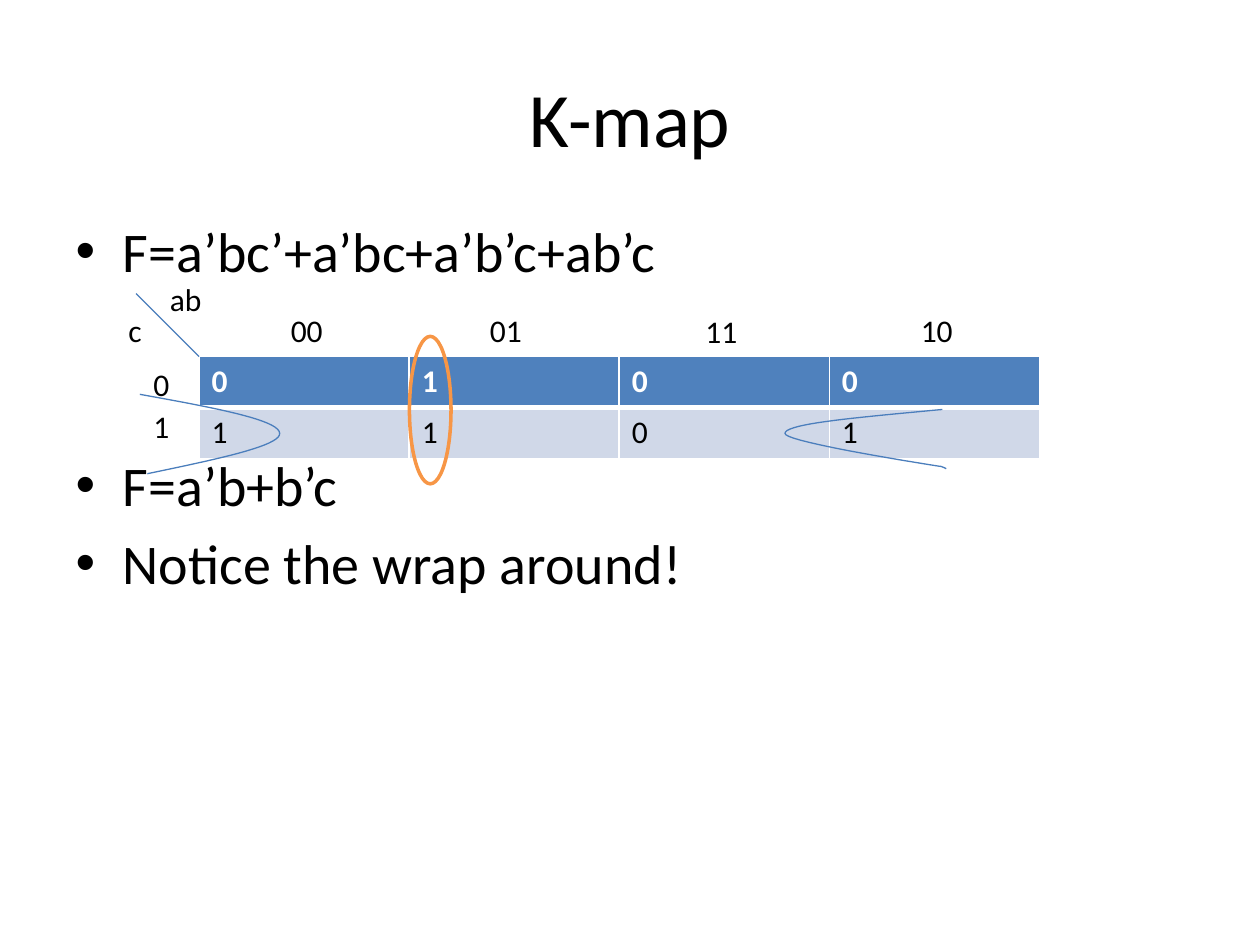
import pptx
import pptx.util
import pptx.dml.color
import pptx.enum.shapes
import pptx.enum.text
import pptx.oxml
import pptx.oxml.ns
import lxml.etree as etree

Inches = pptx.util.Inches
Pt = pptx.util.Pt
BLUE = "4B7EBC"


def color(text):
    return pptx.dml.color.RGBColor.from_string(text)


def place(shape, box):
    shape.left, shape.top, shape.width, shape.height = map(Inches, box)


def write(para, text, size, shade="000000", bold=False):
    run = para.add_run()
    run.text = text
    font = run.font
    font.name, font.size, font.bold = "Calibri", Pt(size), bold
    font.color.rgb = color(shade)


def outline(shape, shade, width):
    shape.line.color.rgb = color(shade)
    shape.line.width = Pt(width)


def border(cell, widths):
    props = cell._tc.get_or_add_tcPr()
    for spot, (side, width) in enumerate(zip("LRTB", widths)):
        line = pptx.oxml.parse_xml(
            f'<a:ln{side} xmlns:a="http://schemas.openxmlformats.org/drawingml/2006/main"'
            f' w="{Pt(width)}"><a:solidFill><a:srgbClr val="FFFFFF"/></a:solidFill></a:ln{side}>')
        props.insert(spot, line)


def add_title(slide, box):
    title = slide.shapes.title
    place(title, box)
    frame = title.text_frame
    frame.vertical_anchor = pptx.enum.text.MSO_ANCHOR.MIDDLE
    frame.paragraphs[0].alignment = pptx.enum.text.PP_ALIGN.CENTER
    write(frame.paragraphs[0], "K-map", 44)


def add_body(slide, box):
    body = slide.placeholders[1]
    place(body, box)
    frame = body.text_frame
    # The second item starts below the map
    items = [("F=a’bc’+a’bc+a’b’c+ab’c", 6.4), ("F=a’b+b’c", 95),
             ("Notice the wrap around!", 6.4)]
    for spot, (text, gap) in enumerate(items):
        para = frame.add_paragraph() if spot else frame.paragraphs[0]
        para.space_before = Pt(gap)
        write(para, text, 32)


def add_map(slide, box):
    values = ["0100", "1101"]
    shape = slide.shapes.add_table(2, 4, *map(Inches, box))
    table = shape.table
    for col in table.columns:
        col.width = Inches(box[2] / 4)
    for r, row in enumerate(values):
        table.rows[r].height = Inches(box[3] / 2)
        for c, value in enumerate(row):
            cell = table.cell(r, c)
            cell.fill.solid()
            cell.fill.fore_color.rgb = color("D0D8E8" if r else "4F81BD")
            border(cell, (1, 1, 3, 1) if r else (1, 1, 1, 3))
            write(cell.text_frame.paragraphs[0], value, 18,
                  "000000" if r else "FFFFFF", not r)


def add_label(slide, text, left, top, width):
    label = slide.shapes.add_textbox(*map(Inches, (left, top, width, 0.4)))
    frame = label.text_frame
    frame.word_wrap = False
    frame.auto_size = pptx.enum.text.MSO_AUTO_SIZE.SHAPE_TO_FIT_TEXT
    write(frame.paragraphs[0], text, 18)


def add_heads(slide, box):
    left, top = box[:2]
    # Column and row codes
    for text, x, y in [("00", 2.21, 2.42), ("01", 3.79, 2.42),
                       ("11", 5.5, 2.43), ("10", 7.21, 2.42)]:
        add_label(slide, text, x, y, 0.46)
    for text, y in [("0", 2.85), ("1", 3.18)]:
        add_label(slide, text, 1.12, y, 0.33)

    # Corner line with the variable names
    line = slide.shapes.add_connector(
        pptx.enum.shapes.MSO_CONNECTOR.STRAIGHT,
        *map(Inches, (left - 0.5, top - 0.5, left, top)))
    outline(line, BLUE, 0.75)
    etree.SubElement(line._element.spPr, pptx.oxml.ns.qn("a:effectLst"))
    add_label(slide, "ab", 1.25, 2.17, 0.46)
    add_label(slide, "c", 0.92, 2.42, 0.31)


def bend(points, steps=20):
    """Points along a cubic curve, without its start."""
    for step in range(1, steps + 1):
        t = step / steps
        parts = ((1 - t) ** 3, 3 * t * (1 - t) ** 2, 3 * t * t * (1 - t), t ** 3)
        yield tuple(sum(w * p[axis] for w, p in zip(parts, points)) for axis in (0, 1))


def add_arc(slide, knots):
    path = [spot for k in range(0, len(knots) - 1, 3) for spot in bend(knots[k:k + 4])]
    pen = slide.shapes.build_freeform(*map(Inches, knots[0]))
    pen.add_line_segments([(Inches(x), Inches(y)) for x, y in path], close=False)
    arc = pen.convert_to_shape()
    arc.shadow.inherit = False
    arc.fill.background()
    outline(arc, BLUE, 0.75)


def add_groups(slide, box):
    # Ring around column 01
    ring = slide.shapes.add_shape(pptx.enum.shapes.MSO_SHAPE.OVAL, *map(Inches, box))
    ring.shadow.inherit = False
    ring.fill.background()
    outline(ring, "F79646", 2)

    # Open arcs for the pair that wraps around
    add_arc(slide, [(7.48, 3.25), (6.85, 3.31), (6.23, 3.36), (6.23, 3.44),
                    (6.22, 3.51), (7.45, 3.7), (7.45, 3.7),
                    (7.47, 3.7), (7.49, 3.71), (7.51, 3.72)])
    add_arc(slide, [(1.11, 3.13), (1.66, 3.23), (2.22, 3.33), (2.22, 3.44),
                    (2.23, 3.54), (1.7, 3.65), (1.17, 3.76)])


def main():
    deck = pptx.Presentation()
    deck.slide_width, deck.slide_height = Inches(10), Inches(7.5)
    slide = deck.slides.add_slide(deck.slide_layouts[1])
    grid = (1.58, 2.83, 6.67, 0.81)
    add_title(slide, (0.5, 0.3, 9, 1.25))
    add_body(slide, (0.5, 1.67, 9, 4.95))
    add_map(slide, grid)
    add_heads(slide, grid)
    add_groups(slide, (3.25, 2.67, 0.33, 1.17))
    deck.save("out.pptx")


if __name__ == "__main__":
    main()
